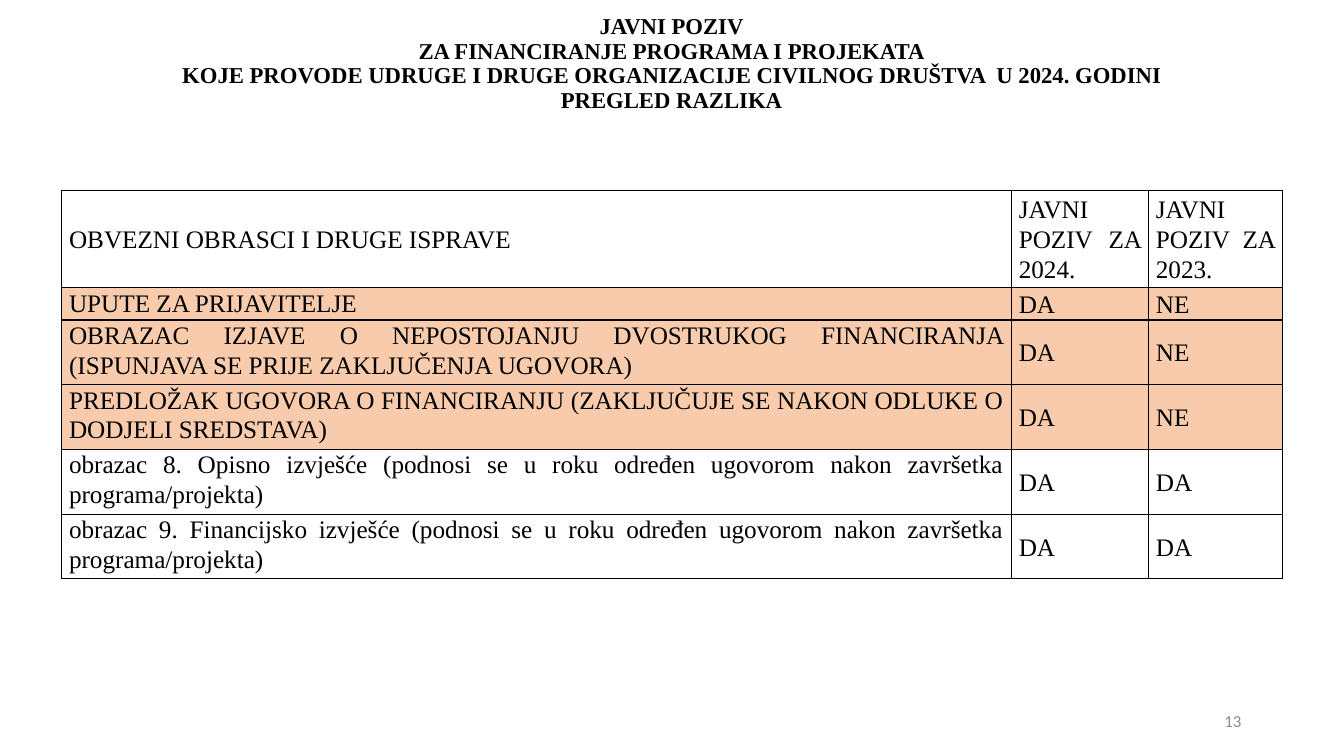
"""Build the slide comparing the required forms of the 2024 and 2023 public calls."""
import dataclasses

import lxml.etree
import pptx
import pptx.dml.color
import pptx.enum.text
import pptx.oxml.ns
import pptx.slide
import pptx.table
import pptx.text.text
import pptx.util

Inches = pptx.util.Inches
Align = pptx.enum.text.PP_ALIGN
Anchor = pptx.enum.text.MSO_ANCHOR

BLACK = pptx.dml.color.RGBColor(0x00, 0x00, 0x00)
GREY = pptx.dml.color.RGBColor(0x8C, 0x8C, 0x8C)
PEACH = pptx.dml.color.RGBColor(0xF8, 0xCB, 0xAD)


@dataclasses.dataclass(frozen=True)
class TextStyle:
    font: str
    size: float
    color: pptx.dml.color.RGBColor
    align: Align
    bold: bool = False
    line_spacing: float = 1.0
    space_after: float = 0


@dataclasses.dataclass(frozen=True)
class FormRow:
    form: str
    call_2024: str
    call_2023: str
    height: float = 0.47
    changed: bool = False


TITLE_STYLE = TextStyle("Times New Roman", 16.2, BLACK, Align.CENTER, True, 0.9)
CELL_STYLE = TextStyle("Times New Roman", 18, BLACK, Align.JUSTIFY, False, 1.07, 8)
NUMBER_STYLE = TextStyle("Calibri", 12, GREY, Align.RIGHT)

TITLE_LINES = [
    "JAVNI POZIV",
    "ZA FINANCIRANJE PROGRAMA I PROJEKATA",
    "KOJE PROVODE UDRUGE I DRUGE ORGANIZACIJE CIVILNOG DRUŠTVA  U 2024. GODINI",
    "PREGLED RAZLIKA",
]
COLUMN_WIDTHS = [9.42, 1.36, 1.33]
FORM_ROWS = [
    FormRow("OBVEZNI OBRASCI I DRUGE ISPRAVE", "JAVNI POZIV ZA 2024.",
            "JAVNI POZIV ZA 2023."),
    FormRow("UPUTE ZA PRIJAVITELJE", "DA", "NE", height=0.23, changed=True),
    FormRow("OBRAZAC IZJAVE O NEPOSTOJANJU DVOSTRUKOG FINANCIRANJA "
            "(ISPUNJAVA SE PRIJE ZAKLJUČENJA UGOVORA)", "DA", "NE", height=0.23, changed=True),
    FormRow("PREDLOŽAK UGOVORA O FINANCIRANJU (ZAKLJUČUJE SE NAKON ODLUKE O "
            "DODJELI SREDSTAVA)", "DA", "NE", height=0.23, changed=True),
    FormRow("obrazac 8. Opisno izvješće (podnosi se u roku određen ugovorom nakon "
            "završetka programa/projekta)", "DA", "DA"),
    FormRow("obrazac 9. Financijsko izvješće (podnosi se u roku određen ugovorom nakon "
            "završetka programa/projekta)", "DA", "DA"),
]


def write_lines(paragraph: pptx.text.text._Paragraph, lines: list[str], style: TextStyle) -> None:
    paragraph.alignment = style.align
    paragraph.line_spacing = style.line_spacing
    paragraph.space_after = pptx.util.Pt(style.space_after)
    for index, line in enumerate(lines):
        if index:
            paragraph.add_line_break()
        run = paragraph.add_run()
        run.text = line
        run.font.name = style.font
        run.font.size = pptx.util.Pt(style.size)
        run.font.bold = style.bold
        run.font.color.rgb = style.color


def add_text(slide: pptx.slide.Slide, left: float, top: float, width: float, height: float,
             lines: list[str], style: TextStyle, anchor: Anchor) -> None:
    shape = slide.shapes.add_textbox(Inches(left), Inches(top), Inches(width), Inches(height))
    frame = shape.text_frame
    frame.word_wrap = True
    frame.vertical_anchor = anchor
    frame.margin_top = frame.margin_bottom = 0
    write_lines(frame.paragraphs[0], lines, style)


def add_borders(cell: pptx.table._Cell) -> None:
    properties = cell._tc.get_or_add_tcPr()
    qualified = pptx.oxml.ns.qn
    for position, side in enumerate(("lnL", "lnR", "lnT", "lnB")):
        line = lxml.etree.Element(qualified(f"a:{side}"), w=str(pptx.util.Pt(1)))
        fill = lxml.etree.SubElement(line, qualified("a:solidFill"))
        lxml.etree.SubElement(fill, qualified("a:srgbClr"), val=str(BLACK))
        properties.insert(position, line)


def fill_cell(cell: pptx.table._Cell, text: str, changed: bool, anchor: Anchor) -> None:
    cell.margin_left = cell.margin_right = pptx.util.Pt(5.4)
    cell.margin_top = cell.margin_bottom = 0
    cell.vertical_anchor = anchor
    if changed:
        cell.fill.solid()
        cell.fill.fore_color.rgb = PEACH
    else:
        cell.fill.background()
    add_borders(cell)
    write_lines(cell.text_frame.paragraphs[0], [text], CELL_STYLE)


def add_forms_table(slide: pptx.slide.Slide) -> None:
    table = slide.shapes.add_table(
        len(FORM_ROWS), len(COLUMN_WIDTHS), Inches(0.61), Inches(1.89),
        Inches(sum(COLUMN_WIDTHS)), Inches(sum(row.height for row in FORM_ROWS))).table
    table.first_row = table.horz_banding = False
    for column, width in zip(table.columns, COLUMN_WIDTHS):
        column.width = Inches(width)
    for row_index, row in enumerate(FORM_ROWS):
        table.rows[row_index].height = Inches(row.height)
        for column_index, text in enumerate((row.form, row.call_2024, row.call_2023)):
            anchor = Anchor.TOP if row_index and not column_index else Anchor.MIDDLE
            fill_cell(table.cell(row_index, column_index), text, row.changed, anchor)


def main() -> None:
    presentation = pptx.Presentation()
    presentation.slide_width = Inches(13.33)
    presentation.slide_height = Inches(7.5)
    slide = presentation.slides.add_slide(presentation.slide_layouts[6])
    add_text(slide, 0.26, 0.15, 12.8, 1.06, TITLE_LINES, TITLE_STYLE, Anchor.TOP)
    add_forms_table(slide)
    add_text(slide, 9.41, 6.95, 3, 0.4, ["13"], NUMBER_STYLE, Anchor.MIDDLE)
    presentation.save("out.pptx")


if __name__ == "__main__":
    main()
